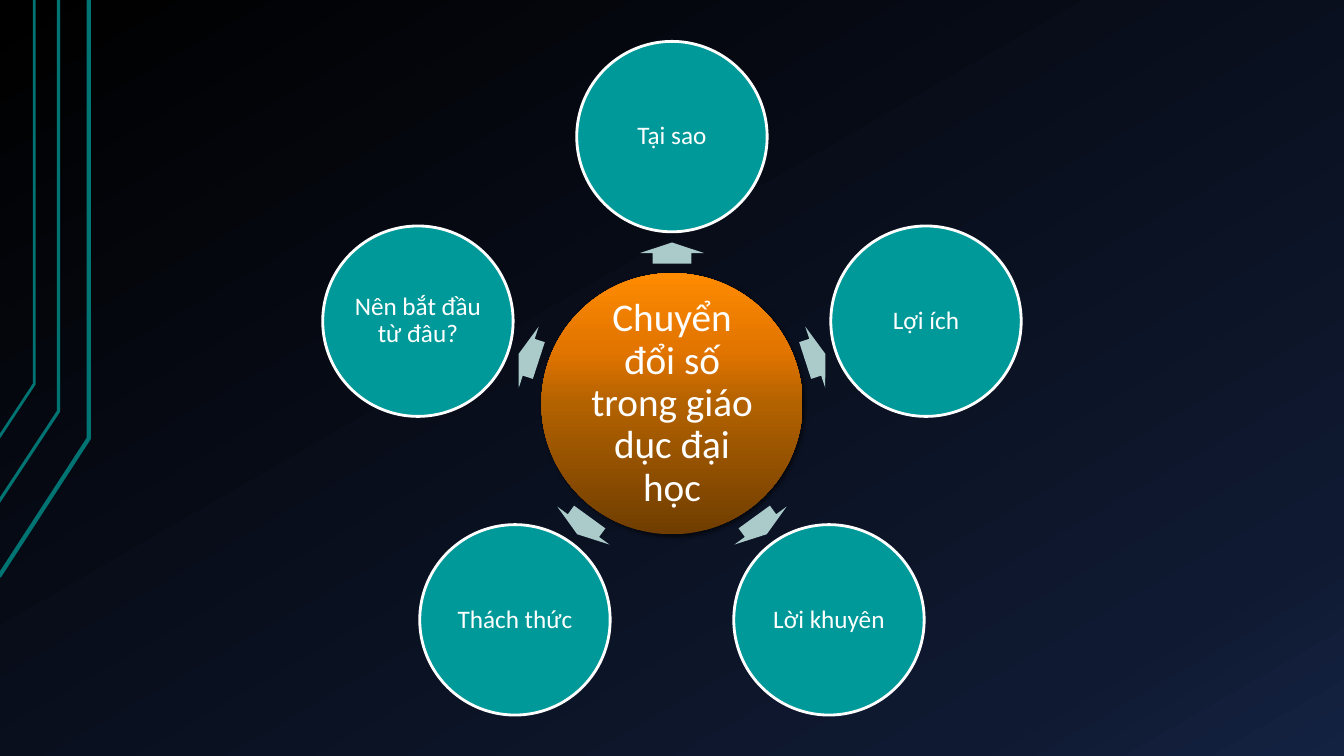
from math import cos, radians, sin

from lxml.etree import SubElement
from pptx import Presentation
from pptx.dml.color import RGBColor
from pptx.enum.shapes import MSO_SHAPE
from pptx.enum.text import MSO_ANCHOR, PP_ALIGN
from pptx.oxml.ns import qn
from pptx.util import Pt

WHITE = RGBColor(0xFF, 0xFF, 0xFF)
BLACK = RGBColor(0x00, 0x00, 0x00)
TEAL = RGBColor(0x00, 0x99, 0x99)
DARK_TEAL = RGBColor(0x00, 0x73, 0x73)
PALE_TEAL = RGBColor(0xAB, 0xCA, 0xCA)
NIGHT_STOPS = [(0, BLACK), (85, RGBColor(0x0F, 0x19, 0x31)),
               (100, RGBColor(0x14, 0x22, 0x42))]
ORANGE_STOPS = [(0, RGBColor(0x6F, 0x3D, 0x00)), (50, RGBColor(0xB3, 0x62, 0x00)),
                (70, RGBColor(0xE2, 0x74, 0x00)), (100, RGBColor(0xFE, 0x8B, 0x00))]

FONT = "Calibri"
CENTER_X, CENTER_Y = 480, 288.4
HUB_SIZE, TOPIC_SIZE = 186.5, 136
TOPIC_ORBIT, ARROW_ORBIT = 190.8, 107.6
ARROW_LENGTH, ARROW_HEIGHT = 15.2, 46

HUB_TEXT = "Chuyển đổi số trong giáo dục đại học"
TOPICS = ["Tại sao", "Lợi ích", "Lời khuyên", "Thách thức", "Nên bắt đầu từ đâu?"]

# Corner lines: width and points
CORNER_LINES = [
    (3, [(-0.7, 411.8), (63.4, 313.2), (63.4, 0)]),
    (2.25, [(-1.4, 359.3), (41.8, 293.8), (41.8, 0)]),
    (2, [(-0.7, 312.5), (24.5, 274.3), (24.5, 0)]),
]


def paint_gradient(fill, element, stops, angle):
    """Fill with colour stops; the angle runs clockwise in degrees."""
    fill.gradient()
    fill.gradient_angle = (360 - angle) % 360
    stop_list = next(element.iter(qn("a:gsLst")))
    for old_stop in list(stop_list):
        stop_list.remove(old_stop)
    for position, color in stops:
        stop = SubElement(stop_list, qn("a:gs"), pos=str(position * 1000))
        SubElement(stop, qn("a:srgbClr"), val=str(color))


def add_shadow(shape):
    effects = shape.element.spPr.find(qn("a:effectLst"))
    shadow = SubElement(effects, qn("a:outerShdw"), blurRad=str(Pt(3)),
                        dist=str(Pt(2)), dir=str(45 * 60000), rotWithShape="0")
    color = SubElement(shadow, qn("a:srgbClr"), val=str(BLACK))
    SubElement(color, qn("a:alpha"), val="60000")


def add_centered(slide, kind, x, y, width, height):
    shape = slide.shapes.add_shape(kind, Pt(x - width / 2), Pt(y - height / 2),
                                   Pt(width), Pt(height))
    shape.shadow.inherit = False
    shape.line.fill.background()
    return shape


def add_circle(slide, x, y, size, text, font_size, inset):
    circle = add_centered(slide, MSO_SHAPE.OVAL, x, y, size, size)
    frame = circle.text_frame
    frame.word_wrap = True
    frame.vertical_anchor = MSO_ANCHOR.MIDDLE
    frame.margin_left = frame.margin_right = Pt(inset)
    frame.margin_top = frame.margin_bottom = Pt(inset)
    frame.text = text
    paragraph = frame.paragraphs[0]
    paragraph.alignment = PP_ALIGN.CENTER
    paragraph.line_spacing = 0.9
    font = paragraph.runs[0].font
    font.name, font.size, font.color.rgb = FONT, Pt(font_size), WHITE
    return circle


def add_hub(slide):
    hub = add_circle(slide, CENTER_X, CENTER_Y, HUB_SIZE, HUB_TEXT, 28, 2.8)
    paint_gradient(hub.fill, hub.element, ORANGE_STOPS, 270)
    add_shadow(hub)


def add_topic(slide, text, angle):
    dx, dy = cos(radians(angle)), sin(radians(angle))
    arrow = add_centered(slide, MSO_SHAPE.RIGHT_ARROW, CENTER_X + ARROW_ORBIT * dx,
                         CENTER_Y + ARROW_ORBIT * dy, ARROW_LENGTH, ARROW_HEIGHT)
    arrow.adjustments[0], arrow.adjustments[1] = 0.6, 0.5
    arrow.rotation = angle
    arrow.fill.solid()
    arrow.fill.fore_color.rgb = PALE_TEAL

    topic = add_circle(slide, CENTER_X + TOPIC_ORBIT * dx, CENTER_Y + TOPIC_ORBIT * dy,
                       TOPIC_SIZE, text, 18, 2)
    topic.fill.solid()
    topic.fill.fore_color.rgb = TEAL
    topic.line.color.rgb = WHITE
    topic.line.width = Pt(2)


def add_corner_line(slide, width, points):
    start, *rest = [(Pt(x), Pt(y)) for x, y in points]
    builder = slide.shapes.build_freeform(*start)
    builder.add_line_segments(rest, close=False)
    corner = builder.convert_to_shape()
    corner.shadow.inherit = False
    corner.fill.background()
    corner.line.color.rgb = DARK_TEAL
    corner.line.width = Pt(width)


def main():
    deck = Presentation()
    deck.slide_width, deck.slide_height = Pt(960), Pt(540)
    slide = deck.slides.add_slide(deck.slide_layouts[6])

    # Background and corner decoration
    paint_gradient(slide.background.fill, slide.element, NIGHT_STOPS, 60)
    for width, points in CORNER_LINES:
        add_corner_line(slide, width, points)

    # Hub with topics spread evenly clockwise from the top
    add_hub(slide)
    for index, text in enumerate(TOPICS):
        add_topic(slide, text, (270 + index * 360 / len(TOPICS)) % 360)

    deck.save("out.pptx")


if __name__ == "__main__":
    main()
